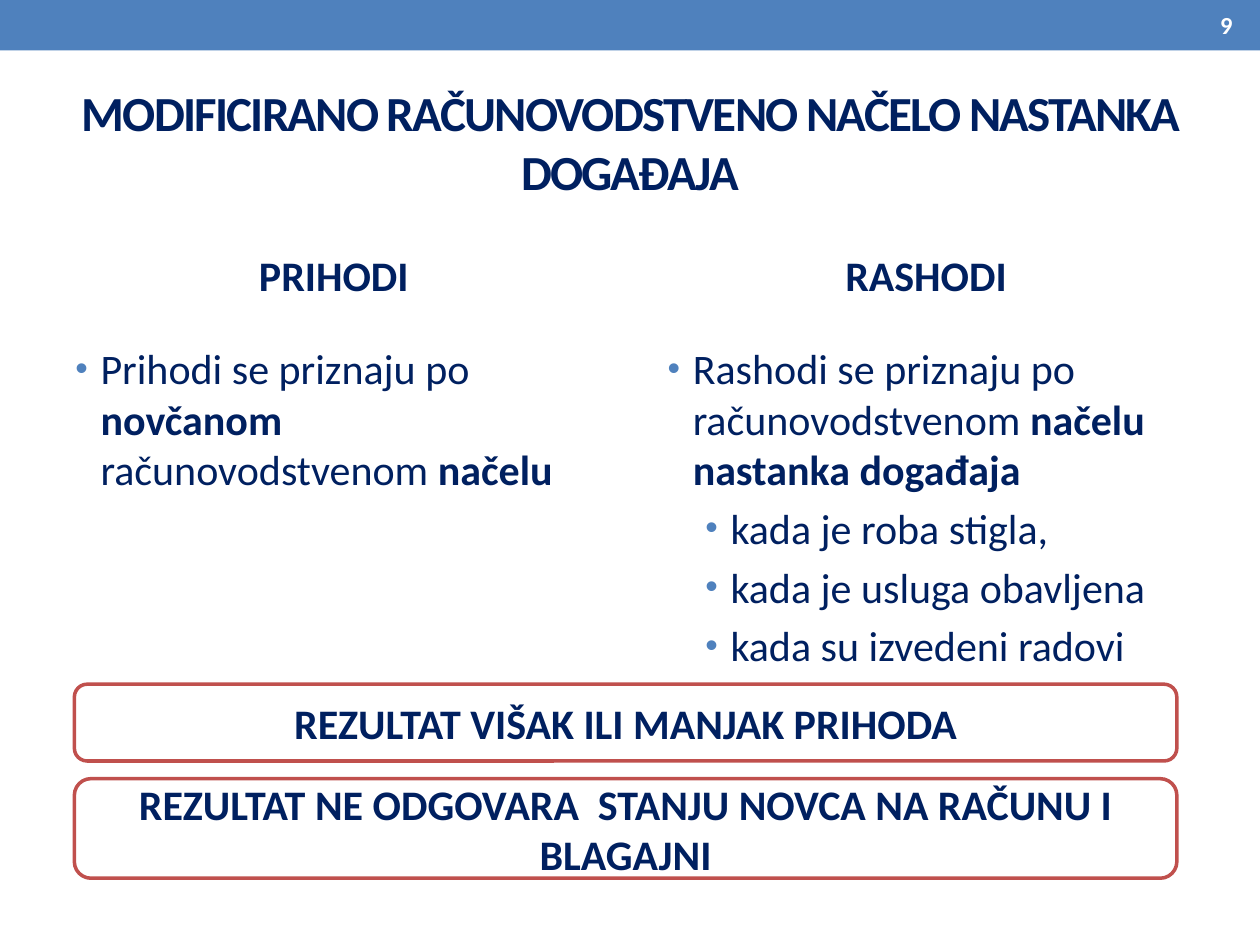
from dataclasses import dataclass

from lxml import etree
from pptx import Presentation
from pptx.dml.color import RGBColor
from pptx.enum.shapes import MSO_SHAPE
from pptx.enum.text import MSO_ANCHOR, PP_ALIGN
from pptx.oxml.ns import qn
from pptx.util import Inches, Pt

RECT, ROUNDED = MSO_SHAPE.RECTANGLE, MSO_SHAPE.ROUNDED_RECTANGLE
TOP, MIDDLE = MSO_ANCHOR.TOP, MSO_ANCHOR.MIDDLE
LEFT, CENTER, RIGHT = PP_ALIGN.LEFT, PP_ALIGN.CENTER, PP_ALIGN.RIGHT


@dataclass(frozen=True)
class Theme:
    font: str = "Calibri"
    navy: str = "002060"
    blue: str = "4F81BD"
    red: str = "C0504D"
    white: str = "FFFFFF"
    title: int = 28
    body: int = 24
    number: int = 14
    outline: int = 2


THEME = Theme()

# Two-column grid, in inches
SLIDE_W, SLIDE_H = 10, 7.5
MARGIN, GUTTER = 0.5, 0.4
COLUMN_W = (SLIDE_W - 2 * MARGIN - GUTTER) / 2
HEADING_ROW = (1.83, 0.7)
LIST_ROW = (2.67, 4.32)
RESULT_LEFT, RESULT_W = 0.59, 8.75

# Each list item: indent level, then (text, bold) parts
COLUMNS = [
    ("PRIHODI", [
        (0, [("Prihodi se priznaju po ", False), ("novčanom", True),
             (" računovodstvenom ", False), ("načelu", True)]),
    ]),
    ("RASHODI", [
        (0, [("Rashodi se priznaju po računovodstvenom ", False),
             ("načelu nastanka događaja", True)]),
        (1, [("kada je roba stigla,", False)]),
        (1, [("kada je usluga obavljena", False)]),
        (1, [("kada su izvedeni radovi", False)]),
    ]),
]
RESULTS = [
    (5.43, 0.61, "REZULTAT VIŠAK ILI MANJAK PRIHODA"),
    (6.18, 0.79, "REZULTAT NE ODGOVARA  STANJU NOVCA NA RAČUNU I BLAGAJNI"),
]


def set_format(target, values):
    for name, value in values.items():
        setattr(target, name, value)


def add_run(paragraph, text, size, color=THEME.navy, bold=True):
    run = paragraph.add_run()
    run.text = text
    set_format(run.font, {"name": THEME.font, "size": Pt(size), "bold": bold})
    run.font.color.rgb = RGBColor.from_string(color)
    return run


def add_text_area(slide, box, anchor=MIDDLE):
    frame = slide.shapes.add_textbox(*map(Inches, box)).text_frame
    set_format(frame, {"word_wrap": True, "vertical_anchor": anchor})
    return frame


def add_label(slide, box, text, size, align=CENTER, color=THEME.navy):
    paragraph = add_text_area(slide, box).paragraphs[0]
    paragraph.alignment = align
    return add_run(paragraph, text, size, color)


def add_panel(slide, kind, box, fill, outline=None):
    panel = slide.shapes.add_shape(kind, *map(Inches, box))
    panel.shadow.inherit = False
    panel.fill.solid()
    panel.fill.fore_color.rgb = RGBColor.from_string(fill)
    if outline:
        panel.line.color.rgb = RGBColor.from_string(outline)
        panel.line.width = Pt(THEME.outline)
    else:
        panel.line.fill.background()
    return panel


def set_bullet(paragraph, level):
    properties = paragraph._p.get_or_add_pPr()
    properties.set("marL", str(Inches(0.2 + 0.3 * level)))
    properties.set("indent", str(Inches(-0.2)))
    color = etree.SubElement(properties, qn("a:buClr"))
    etree.SubElement(color, qn("a:srgbClr"), val=THEME.blue)
    etree.SubElement(properties, qn("a:buSzPct"), val="85000")
    etree.SubElement(properties, qn("a:buFont"), typeface="Arial")
    etree.SubElement(properties, qn("a:buChar"), char="•")


def add_bullet_list(slide, box, items):
    frame = add_text_area(slide, box, TOP)
    for index, (level, parts) in enumerate(items):
        paragraph = frame.add_paragraph() if index else frame.paragraphs[0]
        space = Pt(0.2 * THEME.body) if index else Pt(0)
        set_format(paragraph, {"level": level, "alignment": LEFT,
                               "space_before": space})
        set_bullet(paragraph, level)
        for text, bold in parts:
            add_run(paragraph, text, THEME.body, bold=bold)


def add_result(slide, top, height, text):
    panel = add_panel(slide, ROUNDED, (RESULT_LEFT, top, RESULT_W, height),
                      THEME.white, THEME.red)
    frame = panel.text_frame
    set_format(frame, {"word_wrap": True, "vertical_anchor": MIDDLE})
    paragraph = frame.paragraphs[0]
    paragraph.alignment = CENTER
    add_run(paragraph, text, THEME.body)


def main():
    deck = Presentation()
    set_format(deck, {"slide_width": Inches(SLIDE_W),
                      "slide_height": Inches(SLIDE_H)})
    slide = deck.slides.add_slide(deck.slide_layouts[6])

    # Top band with the slide number
    add_panel(slide, RECT, (0, 0, SLIDE_W, 0.4), THEME.blue)
    add_label(slide, (9.09, 0.02, 0.79, 0.36), "9", THEME.number, RIGHT,
              THEME.white)

    # Title, set slightly tight
    title = add_label(slide, (MARGIN, 0.58, SLIDE_W - 2 * MARGIN, 1.08),
                      "MODIFICIRANO RAČUNOVODSTVENO NAČELO NASTANKA DOGAĐAJA",
                      THEME.title)
    title._r.get_or_add_rPr().set("spc", "-100")

    # Revenue and expense columns
    for index, (heading, items) in enumerate(COLUMNS):
        left = MARGIN + index * (COLUMN_W + GUTTER)
        heading_top, heading_height = HEADING_ROW
        list_top, list_height = LIST_ROW
        add_label(slide, (left, heading_top, COLUMN_W, heading_height),
                  heading, THEME.body)
        add_bullet_list(slide, (left, list_top, COLUMN_W, list_height), items)

    # Results
    for top, height, text in RESULTS:
        add_result(slide, top, height, text)

    deck.save("out.pptx")


if __name__ == "__main__":
    main()
